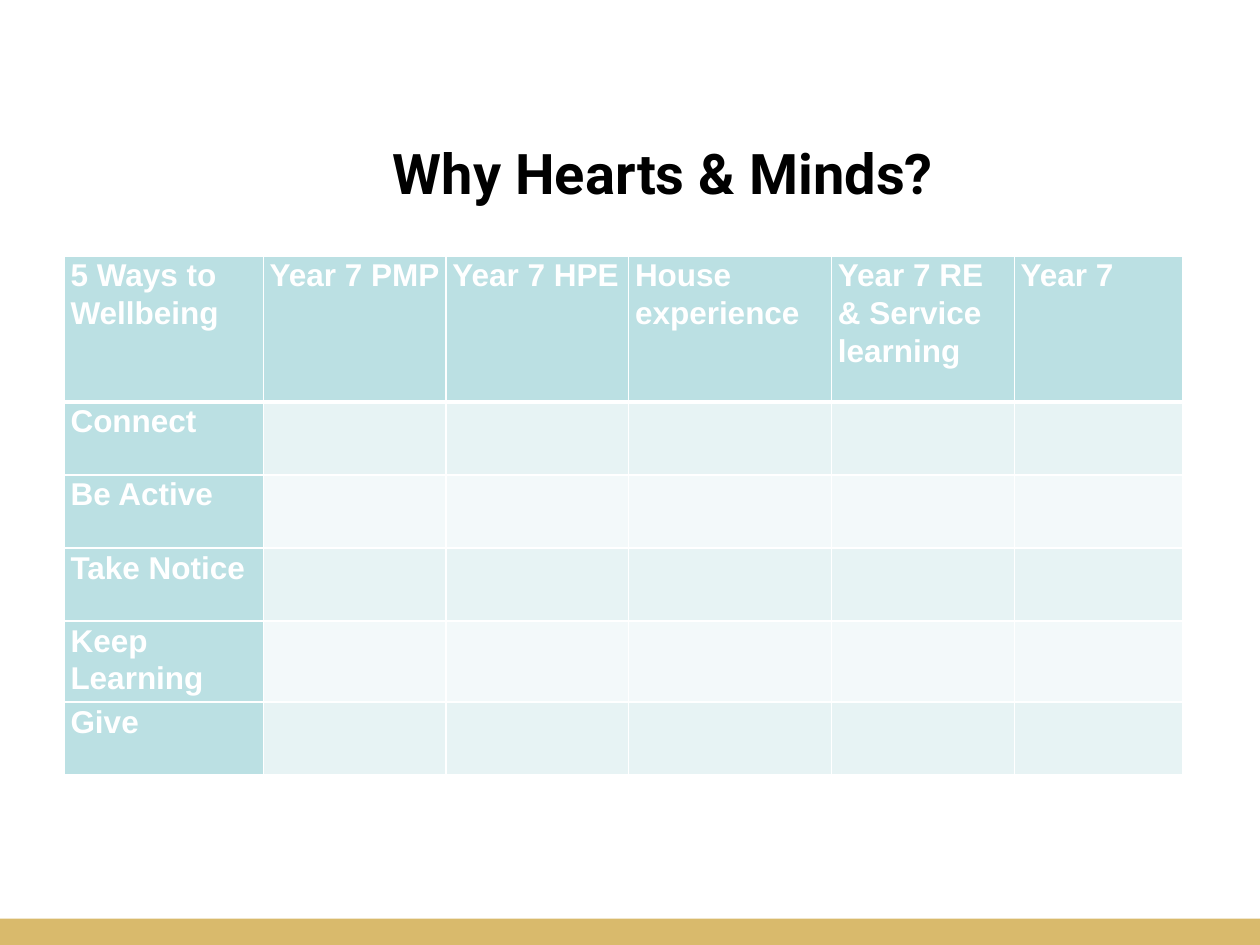
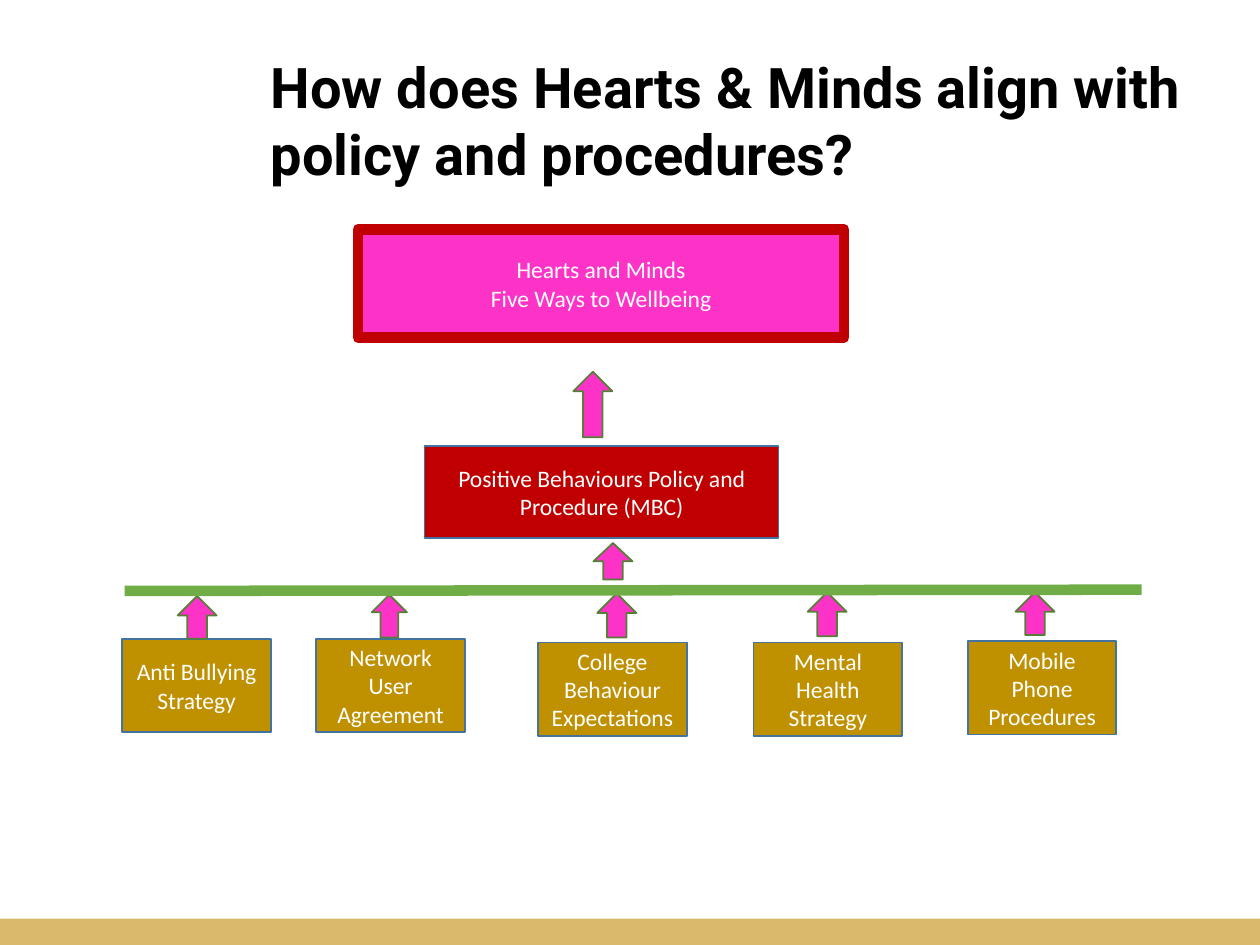
import dataclasses

import lxml.etree
import pptx
import pptx.dml.color
import pptx.enum.shapes
import pptx.enum.text
import pptx.oxml.ns
import pptx.util

Inches = pptx.util.Inches
Pt = pptx.util.Pt
Shape = pptx.enum.shapes.MSO_SHAPE
Align = pptx.enum.text.PP_ALIGN
Anchor = pptx.enum.text.MSO_ANCHOR


@dataclasses.dataclass(frozen=True)
class Theme:
    white: str = "FFFFFF"
    black: str = "000000"
    band: str = "D9BA6C"
    table_header: str = "BBE0E3"
    table_odd: str = "E7F3F4"
    table_even: str = "F3F9FA"
    pink: str = "FD33C8"
    red: str = "C00000"
    gold: str = "BF9000"
    box_line: str = "43739E"
    arrow_line: str = "538035"
    green: str = "70AD47"
    title_font: str = "Roboto"
    table_font: str = "Arial"
    box_font: str = "Calibri"
    title_size: float = 32
    table_size: float = 18
    box_size: float = 13.5


THEME = Theme()
WAYS_TO_WELLBEING = ["Connect", "Be Active", "Take Notice", "Keep Learning", "Give"]
PROGRAMS = [
    "5 Ways to Wellbeing", "Year 7 PMP", "Year 7 HPE", "House experience",
    "Year 7 RE & Service learning", "Year 7",
]
COLUMN_WIDTHS = [1.58, 1.45, 1.45, 1.61, 1.45, 1.34]
ROW_HEIGHTS = [1.16] + [0.58] * len(WAYS_TO_WELLBEING)
POLICIES = [
    ("Anti Bullying Strategy", (0.97, 5.07), (1.41, 4.73, 0.31, 0.34)),
    ("Network User Agreement", (2.51, 5.07), (2.95, 4.72, 0.28, 0.34)),
    ("College Behaviour Expectations", (4.27, 5.1), (4.74, 4.71, 0.31, 0.35)),
    ("Mental Health Strategy", (5.98, 5.1), (6.41, 4.7, 0.31, 0.35)),
    ("Mobile Phone Procedures", (7.68, 5.09), (8.06, 4.7, 0.31, 0.34)),
]


def color(value):
    return pptx.dml.color.RGBColor.from_string(value)


def write_text(text_frame, text, *, font, size, text_color=THEME.white, bold=False,
               align=Align.LEFT, anchor=Anchor.TOP, line_spacing=None):
    text_frame.word_wrap = True
    text_frame.vertical_anchor = anchor
    for index, line in enumerate(text.split("\n")):
        paragraph = text_frame.paragraphs[0] if index == 0 else text_frame.add_paragraph()
        paragraph.alignment = align
        paragraph.line_spacing = line_spacing
        run = paragraph.add_run()
        run.text = line
        run.font.name = font
        run.font.size = Pt(size)
        run.font.bold = bold
        run.font.color.rgb = color(text_color)


def add_filled_shape(slide, kind, bounds, fill, line=None, line_width=1):
    shape = slide.shapes.add_shape(kind, *map(Inches, bounds))
    shape.shadow.inherit = False
    shape.fill.solid()
    shape.fill.fore_color.rgb = color(fill)
    if line:
        shape.line.color.rgb = color(line)
        shape.line.width = Pt(line_width)
    else:
        shape.line.fill.background()
    return shape


def add_box(slide, text, bounds, fill, line=THEME.box_line, line_width=1):
    shape = add_filled_shape(slide, Shape.RECTANGLE, bounds, fill, line, line_width)
    write_text(shape.text_frame, text, font=THEME.box_font, size=THEME.box_size,
               align=Align.CENTER, anchor=Anchor.MIDDLE)


def add_up_arrow(slide, bounds):
    add_filled_shape(slide, Shape.UP_ARROW, bounds, THEME.pink, THEME.arrow_line)


def add_line(slide, start, end, line_color, width):
    connector = slide.shapes.add_connector(
        pptx.enum.shapes.MSO_CONNECTOR.STRAIGHT, *map(Inches, start + end))
    connector.line.color.rgb = color(line_color)
    connector.line.width = Pt(width)
    properties = connector._element.spPr
    lxml.etree.SubElement(properties, pptx.oxml.ns.qn("a:effectLst"))


def add_titled_slide(presentation, title, bounds):
    slide = presentation.slides.add_slide(presentation.slide_layouts[6])
    add_filled_shape(slide, Shape.RECTANGLE, (0, 7.29, 10, 0.21), THEME.band)
    title_box = slide.shapes.add_textbox(*map(Inches, bounds))
    write_text(title_box.text_frame, title, font=THEME.title_font, size=THEME.title_size,
               text_color=THEME.black, bold=True, anchor=Anchor.BOTTOM)
    return slide


def set_cell_borders(cell, widths):
    properties = cell._tc.get_or_add_tcPr()
    for position, (side, width) in enumerate(widths.items()):
        border = lxml.etree.Element(pptx.oxml.ns.qn(f"a:ln{side}"), w=str(Pt(width)))
        fill = lxml.etree.SubElement(border, pptx.oxml.ns.qn("a:solidFill"))
        lxml.etree.SubElement(fill, pptx.oxml.ns.qn("a:srgbClr"), val=THEME.white)
        properties.insert(position, border)


def cell_fill(row, column):
    if row == 0 or column == 0:
        return THEME.table_header
    return THEME.table_odd if row % 2 else THEME.table_even


def add_wellbeing_table(slide, left, top):
    table = slide.shapes.add_table(
        len(ROW_HEIGHTS), len(COLUMN_WIDTHS), Inches(left), Inches(top),
        Inches(sum(COLUMN_WIDTHS)), Inches(sum(ROW_HEIGHTS))).table
    for column, width in zip(table.columns, COLUMN_WIDTHS):
        column.width = Inches(width)
    for row, height in zip(table.rows, ROW_HEIGHTS):
        row.height = Inches(height)
    empty = [""] * (len(PROGRAMS) - 1)
    contents = [PROGRAMS] + [[way] + empty for way in WAYS_TO_WELLBEING]
    for row, texts in enumerate(contents):
        for column, text in enumerate(texts):
            cell = table.cell(row, column)
            cell.fill.solid()
            cell.fill.fore_color.rgb = color(cell_fill(row, column))
            cell.margin_left = cell.margin_right = Inches(0.05)
            cell.margin_top = cell.margin_bottom = 0
            set_cell_borders(cell, {"L": 1, "R": 1, "T": 3 if row == 1 else 1,
                                    "B": 3 if row == 0 else 1})
            if text:
                write_text(cell.text_frame, text, font=THEME.table_font,
                           size=THEME.table_size, bold=True, line_spacing=1.07)


def build_wellbeing_slide(presentation):
    slide = add_titled_slide(presentation, "Why Hearts & Minds?", (3.02, 0.43, 5.19, 1.25))
    add_wellbeing_table(slide, 0.51, 2.03)


def build_policy_slide(presentation):
    slide = add_titled_slide(
        presentation, "How does Hearts & Minds align with policy and procedures?",
        (2.05, 0.36, 7.85, 1.17))
    add_box(slide, "Hearts and Minds\nFive Ways to Wellbeing", (2.84, 1.82, 3.86, 0.86),
            THEME.pink, THEME.red, 6)
    add_box(slide, "Positive Behaviours Policy and Procedure (MBC)",
            (3.37, 3.54, 2.81, 0.73), THEME.red)
    add_up_arrow(slide, (4.55, 2.95, 0.31, 0.52))
    for policy, corner, arrow_bounds in POLICIES:
        add_box(slide, policy, corner + (1.18, 0.74), THEME.gold)
        add_up_arrow(slide, arrow_bounds)
    add_line(slide, (0.99, 4.69), (9.06, 4.68), THEME.green, 6)
    add_up_arrow(slide, (4.71, 4.31, 0.31, 0.29))


def main():
    presentation = pptx.Presentation()
    presentation.slide_width = Inches(10)
    presentation.slide_height = Inches(7.5)
    build_wellbeing_slide(presentation)
    build_policy_slide(presentation)
    presentation.save("out.pptx")


if __name__ == "__main__":
    main()
